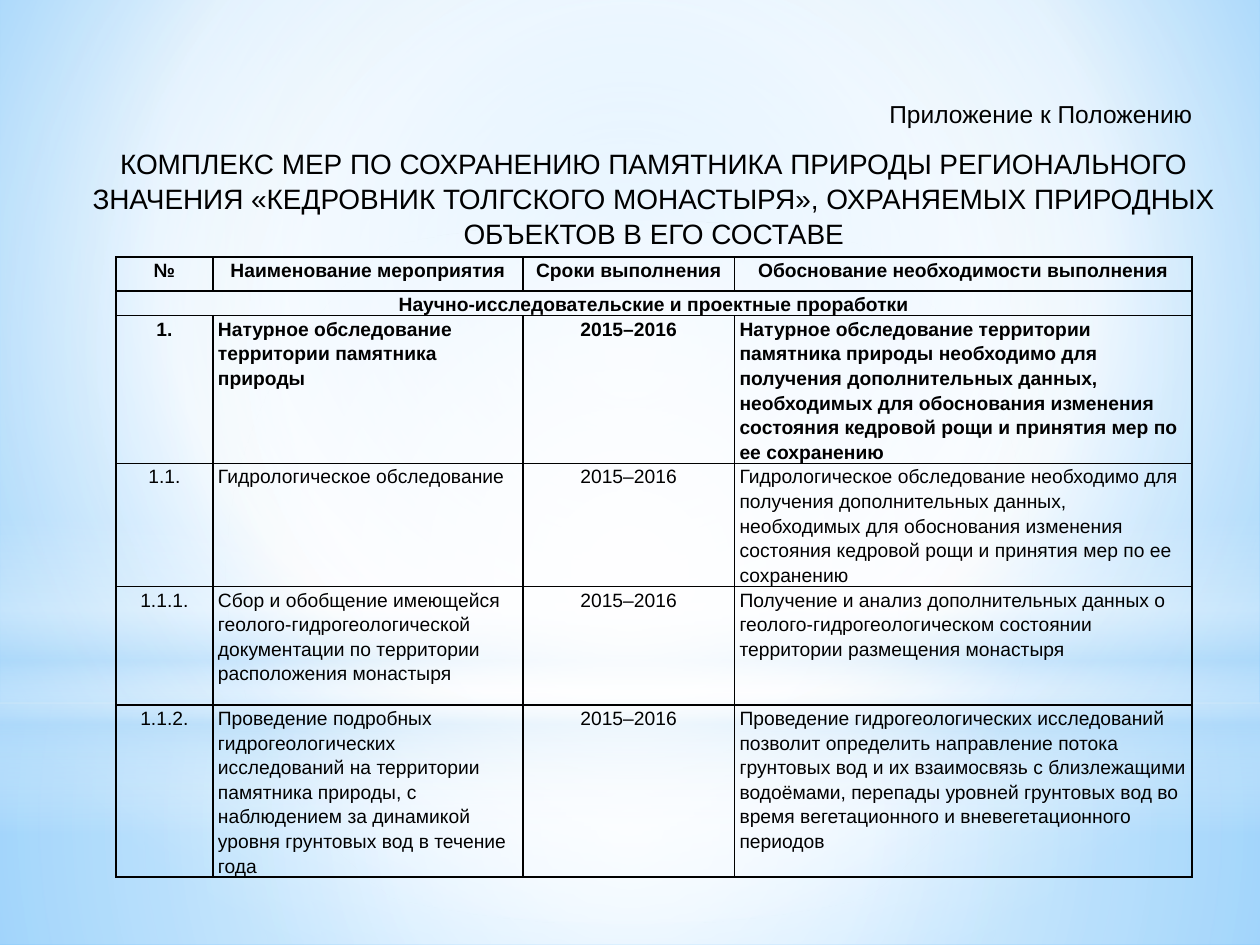
import pptx
import pptx.util
import pptx.dml.color
import pptx.enum.shapes
import pptx.enum.text
import pptx.oxml
import pptx.oxml.ns

Inches = pptx.util.Inches
RGBColor = pptx.dml.color.RGBColor
MSO_SHAPE = pptx.enum.shapes.MSO_SHAPE
PP_ALIGN = pptx.enum.text.PP_ALIGN
MSO_ANCHOR = pptx.enum.text.MSO_ANCHOR

BLACK = RGBColor(0x00, 0x00, 0x00)
WHITE = RGBColor(0xFF, 0xFF, 0xFF)
PALE_BLUE = RGBColor(0xB4, 0xDC, 0xFA)
SKY_BLUE = RGBColor(0x9E, 0xD5, 0xFF)
EDGE_BLUE = RGBColor(0x5B, 0xB9, 0xFF)

CENTRE = (50, 50, 50, 50)
BACKGROUND_STOPS = [(0, SKY_BLUE, 100), (60, WHITE, 100), (100, EDGE_BLUE, 100)]
GLOWS = [
    (MSO_SHAPE.RECTANGLE, 5.58, 1.92,
     [(0, WHITE, 91), (37, WHITE, 76), (100, PALE_BLUE, 79)], CENTRE),
    (MSO_SHAPE.RECTANGLE, 0, 5.58,
     [(0, WHITE, 89), (48, WHITE, 62), (100, PALE_BLUE, 79)], CENTRE),
    (MSO_SHAPE.RECTANGLE, 4.12, 2.5,
     [(0, WHITE, 0), (29, WHITE, 30), (45, PALE_BLUE, 40),
      (55, WHITE, 26), (65, PALE_BLUE, 60), (100, WHITE, 0)], None),
    (MSO_SHAPE.OVAL, 1.75, 5.58, [(0, WHITE, 100), (56, WHITE, 0)], CENTRE),
]

TITLE = ("КОМПЛЕКС МЕР ПО СОХРАНЕНИЮ ПАМЯТНИКА ПРИРОДЫ РЕГИОНАЛЬНОГО "
         "ЗНАЧЕНИЯ «КЕДРОВНИК ТОЛГСКОГО МОНАСТЫРЯ», ОХРАНЯЕМЫХ ПРИРОДНЫХ "
         "ОБЪЕКТОВ В ЕГО СОСТАВЕ")
PERIOD = "2015–2016"
PURPOSE = ("необходимо для получения дополнительных данных, необходимых для "
           "обоснования изменения состояния кедровой рощи и принятия мер по ее "
           "сохранению")
COLUMN_WIDTHS = [0.77, 2.46, 1.68, 3.63]
ROW_HEIGHTS = [0.27, 0.19, 1.08, 0.94, 0.94, 1.35]
BOLD_ROWS = 3
MEASURES = [
    ["№", "Наименование мероприятия", "Сроки выполнения",
     "Обоснование необходимости выполнения"],
    ["Научно-исследовательские и проектные проработки"],
    ["1.", "Натурное обследование территории памятника природы", PERIOD,
     "Натурное обследование территории памятника природы " + PURPOSE],
    ["1.1.", "Гидрологическое обследование", PERIOD,
     "Гидрологическое обследование " + PURPOSE],
    ["1.1.1.",
     "Сбор и обобщение имеющейся геолого-гидрогеологической документации "
     "по территории расположения монастыря", PERIOD,
     "Получение и анализ дополнительных данных о геолого-гидрогеологическом "
     "состоянии территории размещения монастыря"],
    ["1.1.2.",
     "Проведение подробных гидрогеологических исследований на территории "
     "памятника природы, с наблюдением за динамикой уровня грунтовых вод "
     "в течение года", PERIOD,
     "Проведение гидрогеологических исследований позволит определить "
     "направление потока грунтовых вод и их взаимосвязь с близлежащими "
     "водоёмами, перепады уровней грунтовых вод во время вегетационного и "
     "вневегетационного периодов"],
]


class SlideBuilder:
    font_name = "Arial"
    text_color = BLACK

    def __init__(self, slide):
        self.slide = slide

    def fill_text(self, text_frame, text, size, alignment, bold=False, spacing=None):
        text_frame.text = text
        text_frame.word_wrap = True
        paragraph = text_frame.paragraphs[0]
        paragraph.alignment = alignment
        paragraph.line_spacing = spacing
        font = paragraph.runs[0].font
        font.name = self.font_name
        font.size = pptx.util.Pt(size)
        font.bold = bold
        font.color.rgb = self.text_color

    def apply_gradient(self, parent, stops, focus):
        stop_xml = "".join(
            f'<a:gs pos="{position * 1000}"><a:srgbClr val="{color}">'
            f'<a:alpha val="{alpha * 1000}"/></a:srgbClr></a:gs>'
            for position, color, alpha in stops)
        if focus:
            left, top, right, bottom = (value * 1000 for value in focus)
            direction = (f'<a:path path="circle"><a:fillToRect l="{left}" t="{top}" '
                         f'r="{right}" b="{bottom}"/></a:path>')
        else:
            direction = '<a:lin ang="5400000" scaled="0"/>'
        gradient = pptx.oxml.parse_xml(
            f'<a:gradFill {pptx.oxml.ns.nsdecls("a")} rotWithShape="1">'
            f'<a:gsLst>{stop_xml}</a:gsLst>{direction}</a:gradFill>')
        parent.replace(parent.find(pptx.oxml.ns.qn("a:solidFill")), gradient)

    def set_background(self, stops, focus):
        self.slide.background.fill.solid()
        properties = self.slide._element.find(".//" + pptx.oxml.ns.qn("p:bgPr"))
        self.apply_gradient(properties, stops, focus)

    def add_glow(self, kind, top, height, stops, focus):
        shape = self.slide.shapes.add_shape(
            kind, 0, Inches(top), Inches(10), Inches(height))
        shape.shadow.inherit = False
        shape.line.fill.background()
        shape.fill.solid()
        self.apply_gradient(shape._element.spPr, stops, focus)

    def set_title(self, text, left, top, width, height):
        title = self.slide.shapes.title
        title.left, title.top = Inches(left), Inches(top)
        title.width, title.height = Inches(width), Inches(height)
        title.text_frame.vertical_anchor = MSO_ANCHOR.TOP
        title.text_frame.auto_size = pptx.enum.text.MSO_AUTO_SIZE.NONE
        self.fill_text(title.text_frame, text, 16, PP_ALIGN.CENTER, spacing=1.05)
        self.slide.shapes._spTree.append(title._element)

    def add_text(self, text, left, top, width, height):
        box = self.slide.shapes.add_textbox(
            Inches(left), Inches(top), Inches(width), Inches(height))
        self.fill_text(box.text_frame, text, 14, PP_ALIGN.LEFT)

    def add_borders(self, cell):
        properties = cell._tc.get_or_add_tcPr()
        for side in ("lnL", "lnR", "lnT", "lnB"):
            properties.append(pptx.oxml.parse_xml(
                f'<a:{side} {pptx.oxml.ns.nsdecls("a")} w="12700"><a:solidFill>'
                f'<a:srgbClr val="{BLACK}"/></a:solidFill></a:{side}>'))

    def add_table(self, rows, left, top, widths, heights):
        table = self.slide.shapes.add_table(
            len(rows), len(widths), Inches(left), Inches(top),
            Inches(sum(widths)), Inches(sum(heights))).table
        table.first_row = table.horz_banding = False
        for column, width in zip(table.columns, widths):
            column.width = Inches(width)
        for row, height in zip(table.rows, heights):
            row.height = Inches(height)
        for cell in table.iter_cells():
            self.add_borders(cell)
            cell.fill.background()
            cell.margin_left = cell.margin_right = Inches(0.04)
            cell.margin_top = cell.margin_bottom = 0
        for row_index, texts in enumerate(rows):
            if len(texts) == 1:
                table.cell(row_index, 0).merge(table.cell(row_index, len(widths) - 1))
            for column_index, text in enumerate(texts):
                centred = row_index < 2 or column_index in (0, 2)
                self.fill_text(table.cell(row_index, column_index).text_frame, text, 11,
                               PP_ALIGN.CENTER if centred else PP_ALIGN.LEFT,
                               bold=row_index < BOLD_ROWS, spacing=1.15)


def main():
    presentation = pptx.Presentation()
    presentation.slide_width = Inches(10)
    presentation.slide_height = Inches(7.5)
    builder = SlideBuilder(
        presentation.slides.add_slide(presentation.slide_layouts[5]))
    builder.set_background(BACKGROUND_STOPS, (20, 10, 20, 60))
    for glow in GLOWS:
        builder.add_glow(*glow)
    builder.set_title(TITLE, 0.61, 1.1, 9.16, 1.04)
    builder.add_table(MEASURES, 0.92, 2.04, COLUMN_WIDTHS, ROW_HEIGHTS)
    builder.add_text("Приложение к Положению", 6.96, 0.74, 2.81, 0.34)
    presentation.save("out.pptx")


if __name__ == "__main__":
    main()
